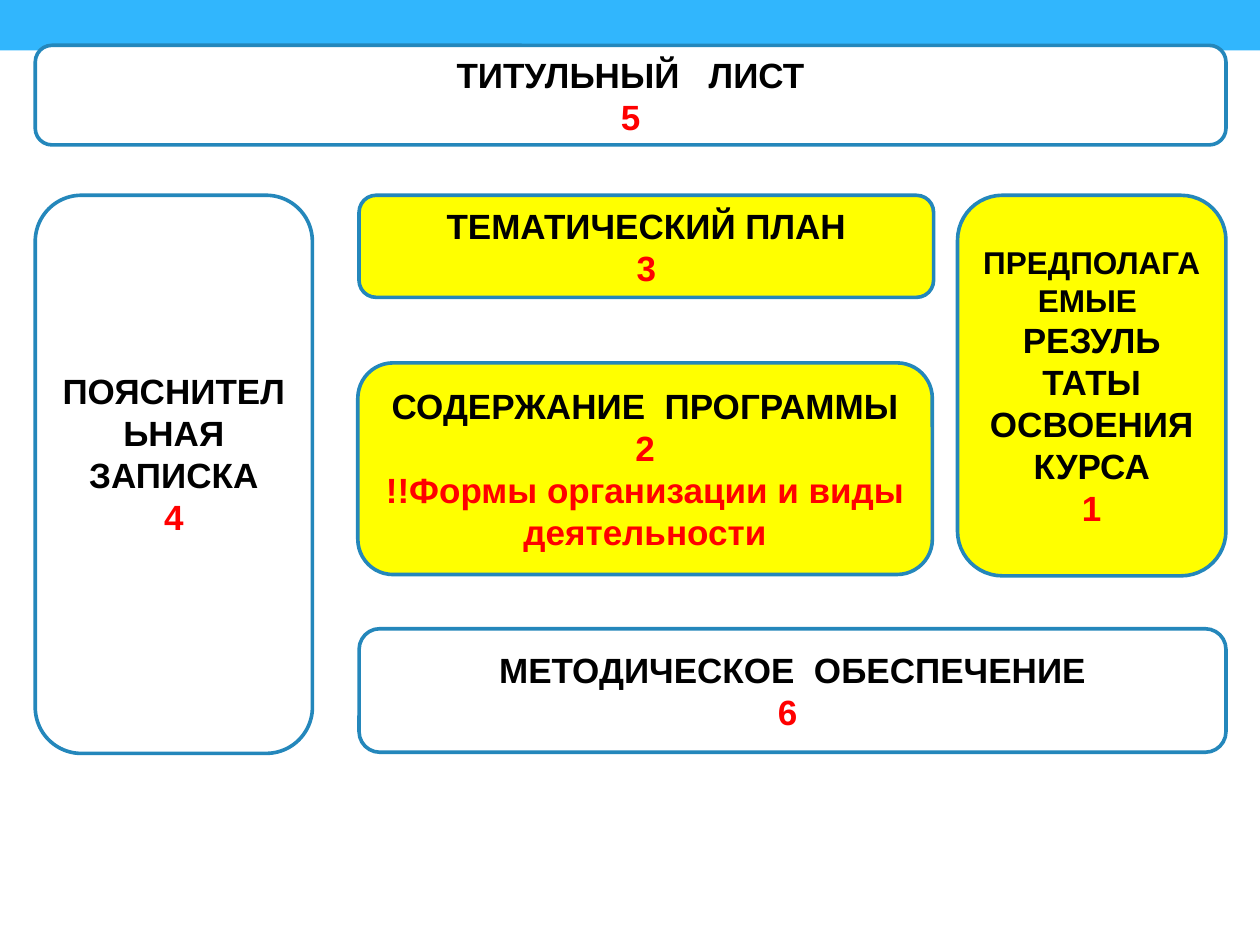
from pptx import Presentation
from pptx import util as u
from pptx.dml.color import RGBColor
from pptx.enum import shapes, text

BLACK = RGBColor(0x00, 0x00, 0x00)
WHITE = RGBColor(0xFF, 0xFF, 0xFF)
RED = RGBColor(0xFF, 0x00, 0x00)
YELLOW = RGBColor(0xFF, 0xFF, 0x00)
BLUE = RGBColor(0x24, 0x87, 0xBB)
SKY = RGBColor(0x31, 0xB6, 0xFD)

prs = Presentation()
prs.slide_width = u.Inches(10)
prs.slide_height = u.Inches(7.5)
s = prs.slides.add_slide(prs.slide_layouts[6])


def add_text(p, content, size=20, color=BLACK):
    p.alignment = text.PP_ALIGN.CENTER
    r = p.add_run()
    r.text = content
    r.font.name = "Arial"
    r.font.size = u.Pt(size)
    r.font.bold = True
    r.font.color.rgb = color


def add_box(kind, left, top, width, height, fill):
    sp = s.shapes.add_shape(kind, *(u.Inches(v) for v in (left, top, width, height)))
    sp.shadow.inherit = False
    sp.fill.solid()
    sp.fill.fore_color.rgb = fill
    return sp


header = add_box(shapes.MSO_SHAPE.RECTANGLE, 0, 0, 10, 0.4, SKY)
header.line.fill.background()

sections = [
    ((0.28, 0.36, 9.45, 0.79), WHITE, ["ТИТУЛЬНЫЙ   ЛИСТ"], ["5"]),
    ((0.28, 1.55, 2.2, 4.43), WHITE, ["ПОЯСНИТЕЛЬНАЯ ЗАПИСКА"], ["4"]),
    ((7.6, 1.55, 2.13, 3.02), YELLOW, ["РЕЗУЛЬ", "ТАТЫ ОСВОЕНИЯ КУРСА"], ["1"]),
    ((2.84, 2.88, 4.56, 1.68), YELLOW, ["СОДЕРЖАНИЕ  ПРОГРАММЫ"],
     ["2", "!!Формы организации и виды деятельности"]),
    ((2.85, 1.55, 4.56, 0.81), YELLOW, ["ТЕМАТИЧЕСКИЙ ПЛАН"], ["3"]),
    ((2.85, 4.99, 6.88, 0.98), WHITE, ["МЕТОДИЧЕСКОЕ  ОБЕСПЕЧЕНИЕ"], ["6 "]),
]

for bounds, fill, titles, notes in sections:
    sp = add_box(shapes.MSO_SHAPE.ROUNDED_RECTANGLE, *bounds, fill)
    sp.line.color.rgb = BLUE
    sp.line.width = u.Pt(2.08)
    tf = sp.text_frame
    tf.word_wrap = True
    tf.vertical_anchor = text.MSO_ANCHOR.MIDDLE
    p = tf.paragraphs[0]
    if titles[0] == "РЕЗУЛЬ":
        add_text(p, "ПРЕДПОЛАГАЕМЫЕ ", size=18)
        p.add_line_break()
    if notes == ["4"]:
        tf.margin_bottom = u.Inches(0.38)
    lines = [(t, BLACK) for t in titles] + [(t, RED) for t in notes]
    for i, (content, color) in enumerate(lines):
        if i:
            p = tf.add_paragraph()
        add_text(p, content, color=color)

prs.save("out.pptx")
